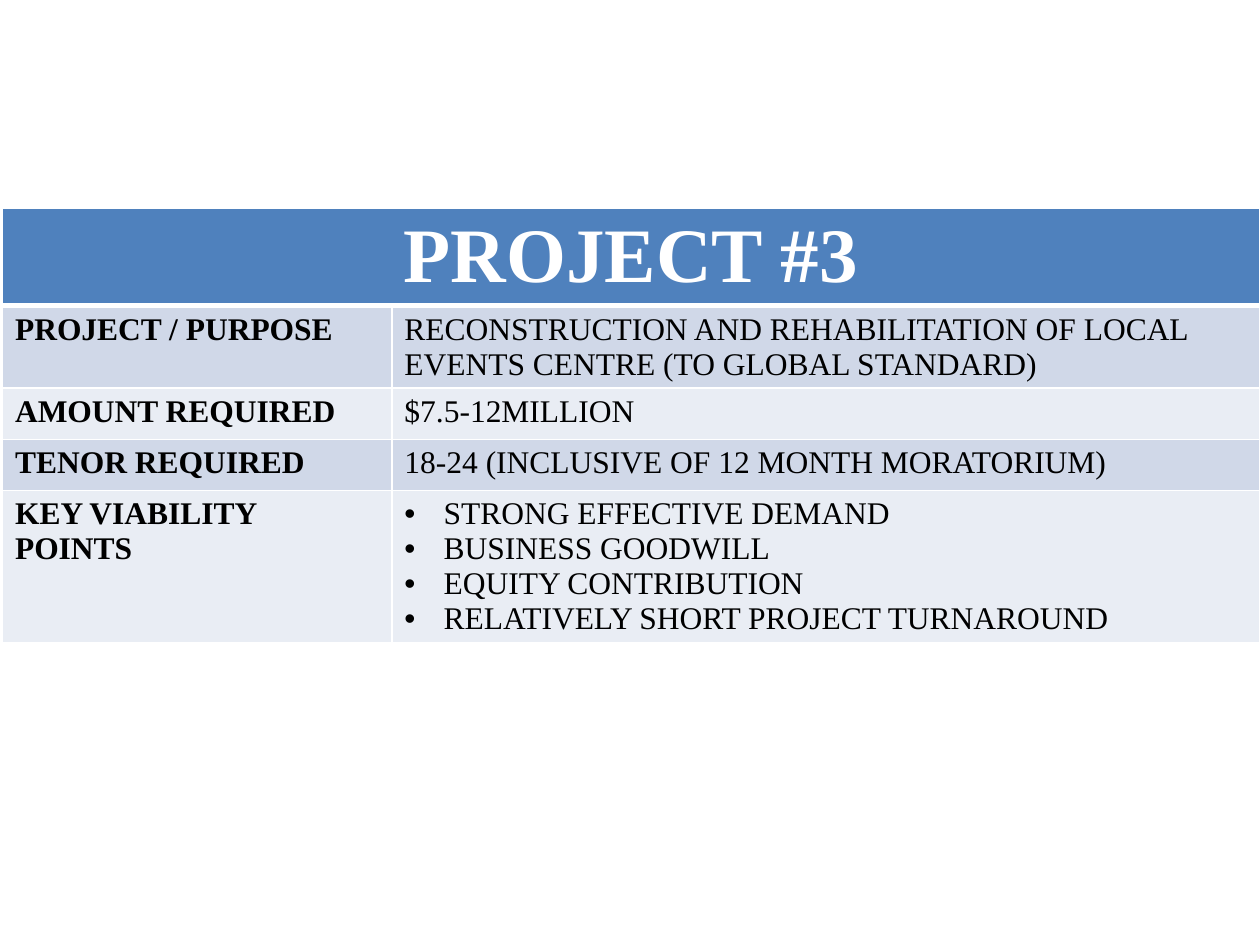
from dataclasses import dataclass

from lxml import etree
from pptx import Presentation
from pptx.dml.color import RGBColor
from pptx.enum import text as txt
from pptx.oxml import ns
from pptx.util import Cm, Pt


@dataclass(frozen=True)
class Theme:
    font: str = "Times New Roman"
    heading_size: int = 44
    body_size: int = 18
    heading_fill: str = "4F81BD"
    bands: tuple = ("D0D8E8", "E9EDF4")
    light: str = "FFFFFF"
    dark: str = "000000"
    rule: float = 1
    heading_rule: float = 3


THEME = Theme()
HEADING = "PROJECT #3"
DETAILS = [
    ("PROJECT / PURPOSE",
     "RECONSTRUCTION AND REHABILITATION OF LOCAL EVENTS CENTRE (TO GLOBAL STANDARD)"),
    ("AMOUNT REQUIRED", "$7.5-12MILLION"),
    ("TENOR REQUIRED", "18-24 (INCLUSIVE OF 12 MONTH MORATORIUM)"),
    ("KEY VIABILITY POINTS",
     ["STRONG EFFECTIVE DEMAND", "BUSINESS GOODWILL", "EQUITY CONTRIBUTION",
      "RELATIVELY SHORT PROJECT TURNAROUND"]),
]
COLUMN_WIDTHS = (Cm(7.85), Cm(17.5))
ROW_HEIGHTS = [Cm(1.03)] * 4 + [Cm(2.29)]


def add_bullet(paragraph, indent=Cm(0.79)):
    """Give a paragraph a hanging round bullet."""
    props = paragraph._p.get_or_add_pPr()
    props.set("marL", str(indent))
    props.set("indent", str(-indent))
    etree.SubElement(props, ns.qn("a:buFont"), typeface="Arial")
    etree.SubElement(props, ns.qn("a:buChar"), char="•")


def write(frame, content, size=THEME.body_size, color=THEME.dark, bold=False,
          align=None):
    """Write one line, or a list of lines as bullets."""
    bulleted = isinstance(content, list)
    for index, line in enumerate(content if bulleted else [content]):
        paragraph = frame.add_paragraph() if index else frame.paragraphs[0]
        paragraph.alignment = align
        if bulleted:
            add_bullet(paragraph)
        run = paragraph.add_run()
        run.text = line
        run.font.name = THEME.font
        run.font.size = Pt(size)
        run.font.bold = bold
        run.font.color.rgb = RGBColor.from_string(color)


def style_cell(cell, fill, top=THEME.rule, bottom=THEME.rule):
    """Fill a cell and rule its four edges."""
    cell.fill.solid()
    cell.fill.fore_color.rgb = RGBColor.from_string(fill)
    props = cell._tc.get_or_add_tcPr()
    edges = {"lnL": THEME.rule, "lnR": THEME.rule, "lnT": top, "lnB": bottom}
    for position, (edge, width) in enumerate(edges.items()):
        line = etree.Element(ns.qn(f"a:{edge}"), w=str(Pt(width)))
        solid = etree.SubElement(line, ns.qn("a:solidFill"))
        etree.SubElement(solid, ns.qn("a:srgbClr"), val=THEME.light)
        props.insert(position, line)


def add_project_table(slide):
    project = slide.shapes.add_table(
        len(ROW_HEIGHTS), len(COLUMN_WIDTHS), Cm(0.05), Cm(4.19),
        sum(COLUMN_WIDTHS), sum(ROW_HEIGHTS)).table
    for column, width in zip(project.columns, COLUMN_WIDTHS):
        column.width = width
    for row, height in zip(project.rows, ROW_HEIGHTS):
        row.height = height

    # Heading across both columns
    heading = project.cell(0, 0)
    heading.merge(project.cell(0, 1))
    for cell in project.rows[0].cells:
        style_cell(cell, THEME.heading_fill, bottom=THEME.heading_rule)
    write(heading.text_frame, HEADING, size=THEME.heading_size,
          color=THEME.light, bold=True, align=txt.PP_ALIGN.CENTER)

    # Banded detail rows: bold label, plain value
    for number, detail in enumerate(DETAILS, start=1):
        band = THEME.bands[(number - 1) % 2]
        top = THEME.heading_rule if number == 1 else THEME.rule
        for column, content in enumerate(detail):
            cell = project.cell(number, column)
            style_cell(cell, band, top=top)
            write(cell.text_frame, content, bold=column == 0)


def main():
    deck = Presentation()
    deck.slide_width, deck.slide_height = Cm(25.4), Cm(19.05)
    slide = deck.slides.add_slide(deck.slide_layouts[6])
    add_project_table(slide)
    deck.save("out.pptx")


if __name__ == "__main__":
    main()
